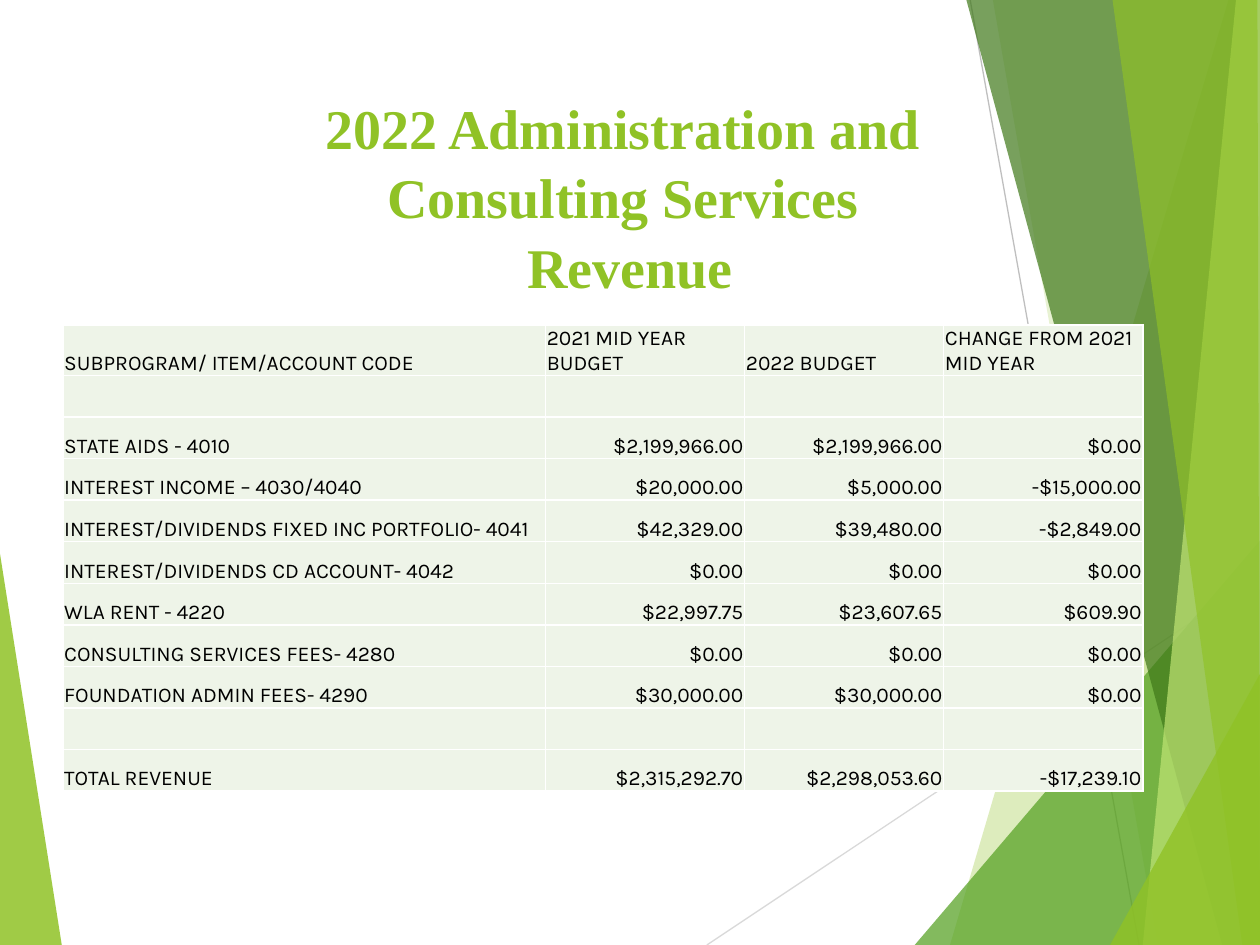
"""Builds the slide on 2022 administration and consulting services revenue."""
from typing import NamedTuple

from lxml.etree import SubElement
from pptx import Presentation
from pptx.dml.color import RGBColor
from pptx.enum.shapes import MSO_CONNECTOR as Connector
from pptx.enum.text import MSO_ANCHOR as Anchor, MSO_AUTO_SIZE as AutoSize, PP_ALIGN as Align
from pptx.oxml.ns import qn
from pptx.util import Emu, Inches, Pt

WIDTH, HEIGHT = Inches(10), Inches(7.5)
GREEN, PALE, WHITE, BLACK = "90C226", "EEF4E8", "FFFFFF", "000000"


class Facet(NamedTuple):
    """A translucent polygon, with corners and opacity in percent."""
    color: str
    opacity: int
    corners: tuple


class Ray(NamedTuple):
    """A thin line between two points in percent of the slide."""
    color: str
    start: tuple
    end: tuple


DECORATION = (
    Facet(GREEN, 85, ((0, 58.6), (4.9, 100), (0, 100))),
    Ray("D9D9D9", (56.1, 100), (100, 61)),
    Ray("BFBFBF", (77, 0), (90.4, 100)),
    Facet(GREEN, 30, ((97.5, 0), (75.4, 100), (100, 100), (100, 0))),
    Facet(GREEN, 20, ((78.8, 0), (91.9, 100), (100, 100), (100, 0))),
    Facet("54A021", 72, ((72.6, 100), (100, 57.2), (100, 100))),
    Facet("3F7819", 70, ((76.7, 0), (97, 100), (100, 100), (100, 0))),
    Facet("C0E474", 70, ((98.1, 0), (90.7, 100), (100, 100), (100, 0))),
    Facet(GREEN, 65, ((88.3, 0), (98.6, 100), (100, 100), (99.8, 0))),
    Facet(GREEN, 80, ((88.1, 100), (100, 71.3), (100, 100))),
)
TITLE = "2022 Administration and \nConsulting Services \nRevenue"
COLUMN_SHARES = (38.3, 15.8, 15.8, 15.8)
HEADER_SHARE, ROW_SHARE = 5.33, 4.4
BLANK_ROW = ("",) * len(COLUMN_SHARES)
ROWS = (
    ("SUBPROGRAM/ ITEM/ACCOUNT CODE", "2021 MID YEAR BUDGET", "2022 BUDGET",
     "CHANGE FROM 2021 MID YEAR"),
    BLANK_ROW,
    ("STATE AIDS - 4010", "$2,199,966.00", "$2,199,966.00", "$0.00"),
    ("INTEREST INCOME – 4030/4040", "$20,000.00", "$5,000.00", "-$15,000.00"),
    ("INTEREST/DIVIDENDS FIXED INC PORTFOLIO- 4041", "$42,329.00", "$39,480.00", "-$2,849.00"),
    ("INTEREST/DIVIDENDS CD ACCOUNT- 4042", "$0.00", "$0.00", "$0.00"),
    ("WLA RENT - 4220", "$22,997.75", "$23,607.65", "$609.90"),
    ("CONSULTING SERVICES FEES- 4280", "$0.00", "$0.00", "$0.00"),
    ("FOUNDATION ADMIN FEES- 4290", "$30,000.00", "$30,000.00", "$0.00"),
    BLANK_ROW,
    ("TOTAL REVENUE", "$2,315,292.70", "$2,298,053.60", "-$17,239.10"),
)


def across(percent: float) -> Emu:
    """Return a share of the slide's width."""
    return Emu(round(WIDTH * percent / 100))


def down(percent: float) -> Emu:
    """Return a share of the slide's height."""
    return Emu(round(HEIGHT * percent / 100))


def spot(point: tuple) -> tuple:
    """Return the slide position of a point in percent."""
    return across(point[0]), down(point[1])


def paint(target, color: str) -> None:
    """Give a fill a solid colour."""
    target.solid()
    target.fore_color.rgb = RGBColor.from_string(color)


def write_text(frame, text: str, *, font: str, size: int, color: str, bold: bool = False,
               align=Align.LEFT, spacing: float = 1.0) -> None:
    """Write one formatted paragraph, with line breaks where the text has them."""
    para = frame.paragraphs[0]
    para.text = text
    para.alignment, para.line_spacing = align, spacing
    for span in para.runs:
        span.font.name, span.font.size, span.font.bold = font, Pt(size), bold
        span.font.color.rgb = RGBColor.from_string(color)
    for line_break in para._p.findall(qn("a:br")):
        SubElement(line_break, qn("a:rPr"), sz=str(size * 100))


def draw_facet(shapes, facet: Facet) -> None:
    """Draw a translucent polygon."""
    first, *others = map(spot, facet.corners)
    builder = shapes.build_freeform(*first)
    builder.add_line_segments(others, close=True)
    shape = builder.convert_to_shape()
    shape.shadow.inherit = False
    shape.line.fill.background()
    paint(shape.fill, facet.color)
    tint = shape.fill._xPr.find(qn("a:solidFill"))[0]
    SubElement(tint, qn("a:alpha"), val=str(facet.opacity * 1000))


def draw_ray(shapes, ray: Ray) -> None:
    """Draw a thin line without shadow."""
    line = shapes.add_connector(Connector.STRAIGHT, *spot(ray.start), *spot(ray.end))
    paint(line.line.fill, ray.color)
    line.line.width = Pt(0.75)
    SubElement(line._element.spPr, qn("a:effectLst"))


def place_title(slide) -> None:
    """Set the title in front of the decoration."""
    title = slide.shapes.title
    slide.shapes._spTree.append(title._element)
    title.left, title.top, title.width, title.height = across(5), down(8.9), across(90), down(20)
    title.text_frame.auto_size = AutoSize.NONE
    title.text_frame.vertical_anchor = Anchor.TOP
    write_text(title.text_frame, TITLE, font="Times New Roman", size=32, color=GREEN,
               bold=True, align=Align.CENTER, spacing=1.04)


def format_cell(cell) -> None:
    """Give a cell its borders, fill, margins and anchor."""
    properties = cell._tc.get_or_add_tcPr()
    for side in ("lnL", "lnR", "lnT", "lnB"):
        border = SubElement(properties, qn(f"a:{side}"), w=str(Pt(1)))
        SubElement(SubElement(border, qn("a:solidFill")), qn("a:srgbClr"), val=WHITE)
    paint(cell.fill, PALE)
    cell.margin_left = cell.margin_right = cell.margin_top = Inches(0.01)
    cell.margin_bottom = 0
    cell.vertical_anchor = Anchor.BOTTOM


def add_revenue_table(shapes) -> None:
    """Add the table of revenue by account."""
    row_shares = [HEADER_SHARE] + [ROW_SHARE] * (len(ROWS) - 1)
    table = shapes.add_table(len(ROWS), len(COLUMN_SHARES), across(5), down(34.4),
                             across(sum(COLUMN_SHARES)), down(sum(row_shares))).table
    for column, share in zip(table.columns, COLUMN_SHARES):
        column.width = across(share)
    for row_index, (row, share, values) in enumerate(zip(table.rows, row_shares, ROWS)):
        row.height = down(share)
        for column_index, (cell, value) in enumerate(zip(row.cells, values)):
            format_cell(cell)
            if value:
                align = Align.RIGHT if row_index and column_index else Align.LEFT
                write_text(cell.text_frame, value, font="Karla", size=12, color=BLACK, align=align)


def main() -> None:
    """Build and save the deck."""
    deck = Presentation()
    deck.slide_width, deck.slide_height = WIDTH, HEIGHT
    slide = deck.slides.add_slide(deck.slide_layouts.get_by_name("Title Only"))
    for item in DECORATION:
        draw = draw_facet if isinstance(item, Facet) else draw_ray
        draw(slide.shapes, item)
    place_title(slide)
    add_revenue_table(slide.shapes)
    deck.save("out.pptx")


if __name__ == "__main__":
    main()
